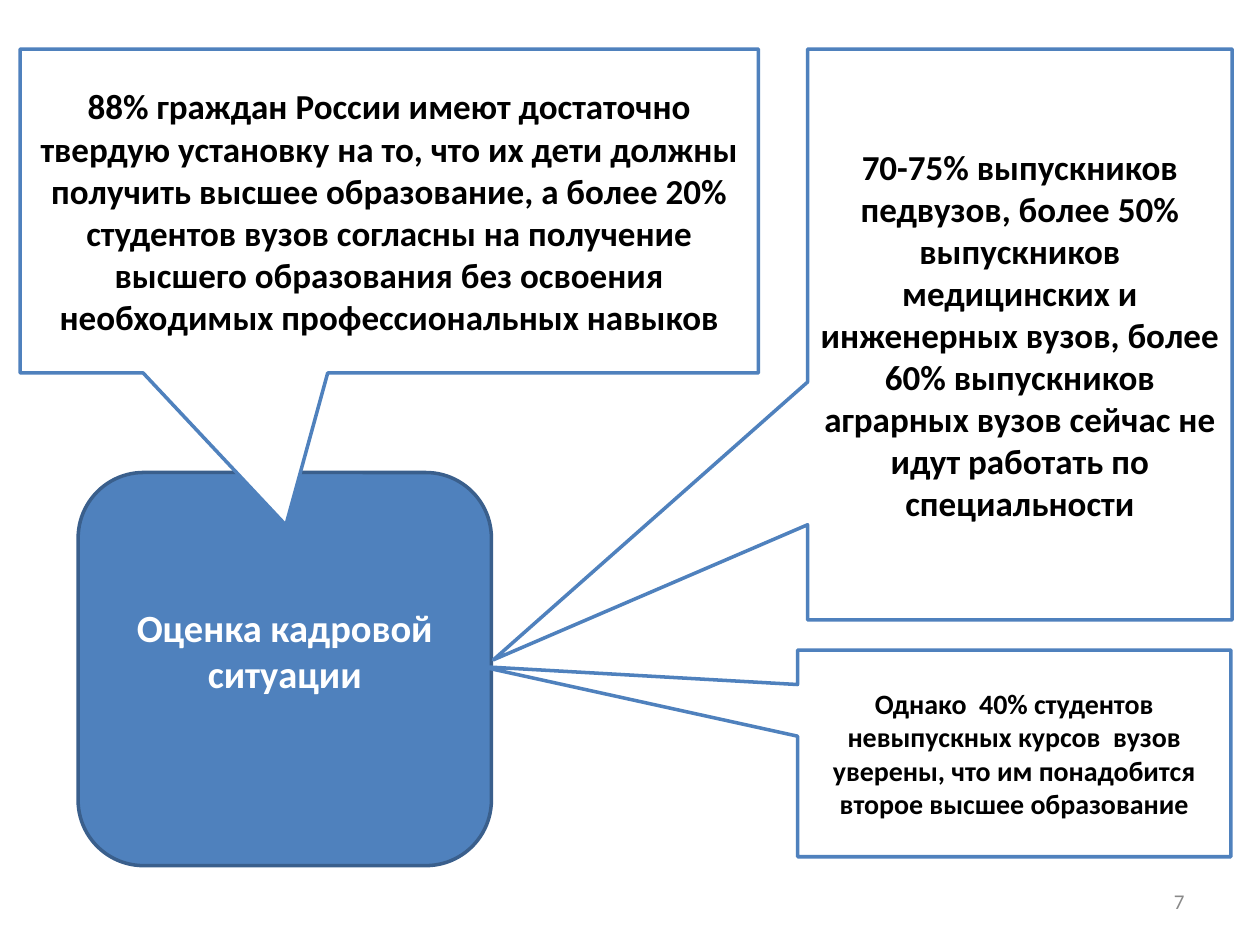
from dataclasses import dataclass

from pptx import Presentation
from pptx.dml.color import RGBColor as RGB
from pptx.enum.shapes import MSO_SHAPE as SHAPE
from pptx.enum.text import MSO_ANCHOR as ANCHOR, PP_ALIGN as ALIGN
from pptx.util import Inches, Pt


@dataclass(frozen=True)
class Theme:
    font: str = "Calibri"
    blue: str = "4F81BD"
    dark_blue: str = "3A5F8C"
    white: str = "FFFFFF"
    black: str = "000000"
    gray: str = "898989"
    title: int = 22
    body: int = 20
    small: int = 16
    number: int = 12
    line: int = 2


def write(tf, text, *, font, size, color, bold=True, align=ALIGN.CENTER, bottom=0.05):
    tf.word_wrap = True
    tf.vertical_anchor = ANCHOR.MIDDLE
    tf.margin_bottom = Inches(bottom)
    p = tf.paragraphs[0]
    p.alignment = align
    r = p.add_run()
    r.text = text
    r.font.name = font
    r.font.size = Pt(size)
    r.font.bold = bold
    r.font.color.rgb = RGB.from_string(color)


class SlideBuilder:
    def __init__(self, slide, theme):
        self.s = slide
        self.theme = theme

    def shape(self, kind, box, fill, line):
        sp = self.s.shapes.add_shape(kind, *map(Inches, box))
        sp.shadow.inherit = False
        sp.fill.solid()
        sp.fill.fore_color.rgb = RGB.from_string(fill)
        sp.line.color.rgb = RGB.from_string(line)
        sp.line.width = Pt(self.theme.line)
        return sp

    def topic(self, text, box):
        t = self.theme
        sp = self.shape(SHAPE.ROUNDED_RECTANGLE, box, t.blue, t.dark_blue)
        write(sp.text_frame, text, font=t.font, size=t.title, color=t.white, bottom=0.35)

    def callout(self, text, box, tip, size):
        t = self.theme
        sp = self.shape(SHAPE.RECTANGULAR_CALLOUT, box, t.white, t.blue)
        sp.adjustments[0], sp.adjustments[1] = tip
        write(sp.text_frame, text, font=t.font, size=size, color=t.black)

    def page_number(self, text, box):
        t = self.theme
        sp = self.s.shapes.add_textbox(*map(Inches, box))
        write(sp.text_frame, text, font=t.font, size=t.number, color=t.gray,
              bold=False, align=ALIGN.RIGHT)


def main():
    prs = Presentation()
    prs.slide_width, prs.slide_height = Inches(10), Inches(7.5)
    theme = Theme()
    b = SlideBuilder(prs.slides.add_slide(prs.slide_layouts[6]), theme)

    b.topic("Оценка кадровой ситуации", (0.62, 3.75, 3.28, 3.12))
    b.callout(
        "88% граждан России имеют достаточно твердую установку на то, что их дети "
        "должны получить высшее образование, а более 20% студентов вузов согласны "
        "на получение высшего образования без освоения необходимых "
        "профессиональных навыков",
        (0.16, 0.39, 5.86, 2.57), (-0.14, 0.97), theme.body)
    b.page_number("7", (7.17, 6.95, 2.33, 0.4))
    b.callout(
        "Однако  40% студентов невыпускных курсов  вузов уверены, что им "
        "понадобится второе высшее образование",
        (6.33, 5.16, 3.44, 1.64), (-1.23, -0.42), theme.small)
    b.callout(
        "70-75% выпускников педвузов, более 50% выпускников медицинских и "
        "инженерных вузов, более 60% выпускников аграрных вузов сейчас не идут "
        "работать по специальности",
        (6.41, 0.39, 3.37, 4.53), (-1.24, 0.57), theme.body)

    prs.save("out.pptx")


if __name__ == "__main__":
    main()
